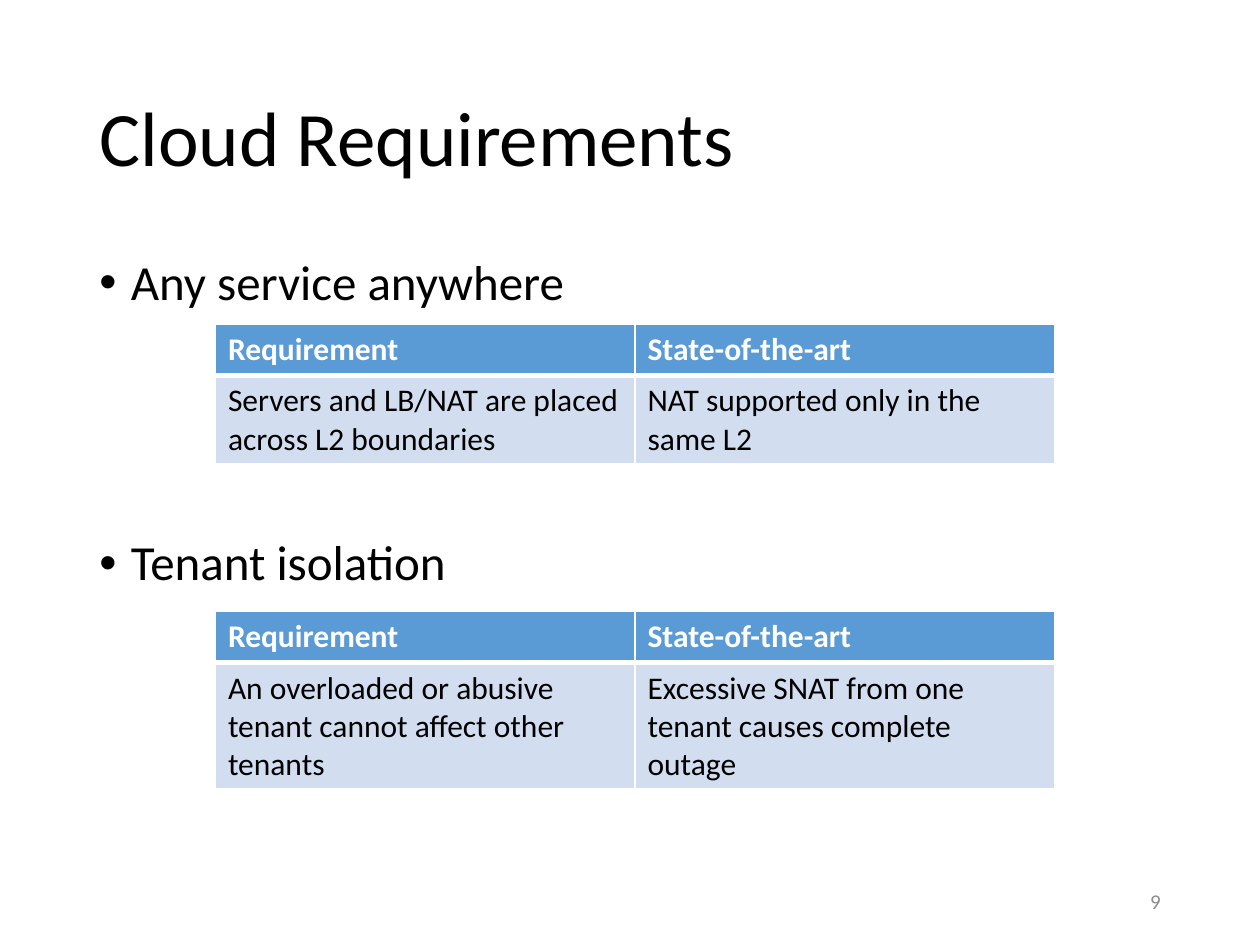
"""Build the Cloud Requirements slide: two bullet topics, each with a comparison table."""
from dataclasses import dataclass

import pptx
import pptx.dml.color
import pptx.enum.text
import pptx.oxml
import pptx.oxml.ns
import pptx.util

Inches = pptx.util.Inches
Pt = pptx.util.Pt
Align = pptx.enum.text.PP_ALIGN
Anchor = pptx.enum.text.MSO_ANCHOR

FONT = "Calibri"
BLACK, WHITE, GREY = "000000", "FFFFFF", "8C8C8C"
HEADER_FILL, BODY_FILL = "5B9BD5", "D2DEEF"
TABLE_LEFT, COLUMN_WIDTH, HEADER_HEIGHT = 1.71, 3.33, 0.41
HEADINGS = ("Requirement", "State-of-the-art")


@dataclass
class Topic:
    name: str
    space_before: float
    table_top: float
    body_height: float
    answers: tuple[str, str]


TOPICS = (
    Topic("Any service anywhere", 10, 2.57, 0.7,
          ("Servers and LB/NAT are placed across L2 boundaries",
           "NAT supported only in the same L2")),
    Topic("Tenant isolation", 130, 4.85, 1.0,
          ("An overloaded or abusive tenant cannot affect other tenants",
           "Excessive SNAT from one tenant causes complete outage")),
)


def color(value: str) -> pptx.dml.color.RGBColor:
    return pptx.dml.color.RGBColor.from_string(value)


def apply(target, formats: dict) -> None:
    for name, value in formats.items():
        setattr(target, name, value)


def write(para, text: str, size: float, ink: str, bold: bool = False, **formats) -> None:
    apply(para, formats)
    span = para.add_run()
    span.text = text
    apply(span.font, {"name": FONT, "size": Pt(size), "bold": bold})
    span.font.color.rgb = color(ink)


def add_frame(page, left: float, top: float, width: float, height: float, anchor):
    box = page.shapes.add_textbox(Inches(left), Inches(top), Inches(width), Inches(height))
    apply(box.text_frame, {"word_wrap": True, "vertical_anchor": anchor})
    return box.text_frame


def add_bullet(para) -> None:
    properties = para._p.get_or_add_pPr()
    properties.set("marL", str(Inches(0.25)))
    properties.set("indent", str(Inches(-0.25)))
    namespace = pptx.oxml.ns.nsdecls("a")
    for markup in (f'<a:buFont {namespace} typeface="Arial"/>',
                   f'<a:buChar {namespace} char="•"/>'):
        properties.append(pptx.oxml.parse_xml(markup))


def add_borders(cell, widths: dict[str, float]) -> None:
    properties = cell._tc.get_or_add_tcPr()
    for side, width in widths.items():
        properties.append(pptx.oxml.parse_xml(
            f'<a:ln{side} {pptx.oxml.ns.nsdecls("a")} w="{Pt(width)}">'
            f'<a:solidFill><a:srgbClr val="{WHITE}"/></a:solidFill></a:ln{side}>'))


def fill_cell(cell, text: str, header: bool) -> None:
    add_borders(cell, {"L": 1, "R": 1, "T": 1 if header else 3, "B": 3 if header else 1})
    cell.fill.solid()
    cell.fill.fore_color.rgb = color(HEADER_FILL if header else BODY_FILL)
    write(cell.text_frame.paragraphs[0], text, 18, WHITE if header else BLACK, header)


def add_comparison(page, topic: Topic) -> None:
    table = page.shapes.add_table(
        2, 2, Inches(TABLE_LEFT), Inches(topic.table_top),
        Inches(2 * COLUMN_WIDTH), Inches(HEADER_HEIGHT + topic.body_height)).table
    for column in table.columns:
        column.width = Inches(COLUMN_WIDTH)
    for row, height in zip(table.rows, (HEADER_HEIGHT, topic.body_height)):
        row.height = Inches(height)
    for index, texts in enumerate((HEADINGS, topic.answers)):
        for cell, text in zip(table.rows[index].cells, texts):
            fill_cell(cell, text, header=index == 0)


def main() -> None:
    deck = pptx.Presentation()
    apply(deck, {"slide_width": Inches(10), "slide_height": Inches(7.5)})
    page = deck.slides.add_slide(deck.slide_layouts[6])

    title = add_frame(page, 0.69, 0.4, 8.62, 1.45, Anchor.MIDDLE)
    write(title.paragraphs[0], "Cloud Requirements", 44, BLACK, line_spacing=0.9)

    body = add_frame(page, 0.69, 2, 8.62, 4.76, Anchor.TOP)
    for index, topic in enumerate(TOPICS):
        para = body.add_paragraph() if index else body.paragraphs[0]
        write(para, topic.name, 28, BLACK, line_spacing=0.9,
              space_before=Pt(topic.space_before))
        add_bullet(para)
        add_comparison(page, topic)

    number = add_frame(page, 7.06, 6.95, 2.25, 0.4, Anchor.MIDDLE)
    write(number.paragraphs[0], "9", 12, GREY, alignment=Align.RIGHT)
    deck.save("out.pptx")


if __name__ == "__main__":
    main()
